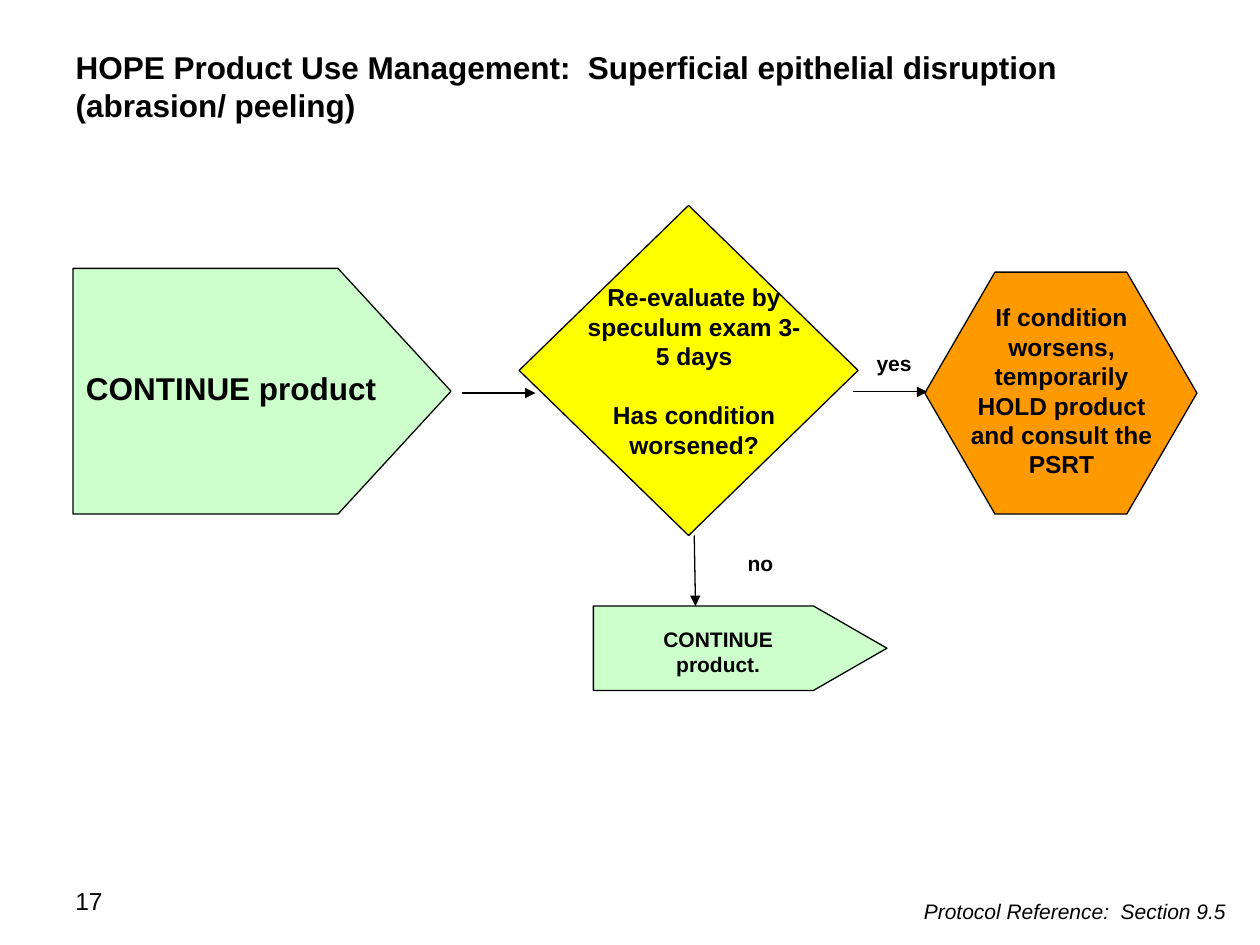
from dataclasses import dataclass

from lxml import etree
from pptx import Presentation
from pptx.dml.color import RGBColor
from pptx.enum.shapes import MSO_CONNECTOR, MSO_SHAPE
from pptx.enum.text import MSO_ANCHOR, MSO_AUTO_SIZE, PP_ALIGN
from pptx.oxml.ns import qn
from pptx.util import Inches, Pt

PENTAGON, HEXAGON, DIAMOND = MSO_SHAPE.PENTAGON, MSO_SHAPE.HEXAGON, MSO_SHAPE.DIAMOND
STRAIGHT = MSO_CONNECTOR.STRAIGHT
LEFT, CENTER, RIGHT = PP_ALIGN.LEFT, PP_ALIGN.CENTER, PP_ALIGN.RIGHT
TOP = MSO_ANCHOR.TOP
NO_FIT = MSO_AUTO_SIZE.NONE

COLORS = {"ink": "000000", "continue": "CCFFCC", "decide": "FFFF00", "hold": "FF9900"}
FONT = "Arial"
LINE_WIDTH = Pt(0.75)


@dataclass
class Step:
    kind: MSO_SHAPE
    at: tuple[float, float, float, float]
    color: str
    adjustment: float | None = None


@dataclass
class Label:
    at: tuple[float, float, float, float]
    lines: tuple[str, ...]
    size: int
    align: PP_ALIGN = CENTER
    bold: bool = True
    italic: bool = False
    gap: int = 0
    inset: float = 0.1


@dataclass
class Arrow:
    start: tuple[float, float]
    end: tuple[float, float]


STEPS = [
    Step(PENTAGON, (0.58, 2.13, 3, 1.95), "continue", 0.46),
    Step(HEXAGON, (7.34, 2.16, 2.16, 1.92), "hold", 0.29),
    Step(DIAMOND, (4.12, 1.63, 2.69, 2.62), "decide"),
    Step(PENTAGON, (4.71, 4.81, 2.33, 0.67), "continue", 0.87),
]
ARROWS = [
    Arrow((3.67, 3.12), (4.25, 3.12)),
    Arrow((6.77, 3.11), (7.36, 3.11)),
    Arrow((5.51, 4.25), (5.52, 4.81)),
]
TITLE = Label(
    (0.5, 0.33, 9, 0.71),
    ("HOPE Product Use Management:  Superficial epithelial disruption (abrasion/ peeling)",),
    18,
    LEFT,
)
LABELS = [
    Label((0.5, 6.98, 2.33, 0.52), ("17",), 14, LEFT, bold=False),
    Label((0.5, 2.88, 2.67, 0.71), ("CONTINUE product",), 18),
    Label((6.08, 7.08, 3.75, 0.3), ("Protocol Reference:  Section 9.5",), 12, RIGHT,
          bold=False, italic=True),
    Label((7.55, 2.35, 1.75, 1.51),
          ("If condition worsens, temporarily HOLD product and consult the PSRT",), 14),
    Label((4.53, 2.19, 1.96, 1.7),
          ("Re-evaluate by speculum exam 3-5 days", "Has condition worsened?"), 14, gap=17),
    Label((5.71, 4.32, 0.75, 0.3), ("no",), 12, inset=0),
    Label((6.77, 2.73, 0.75, 0.3), ("yes",), 12, inset=0),
    Label((4.84, 4.92, 1.72, 0.51), ("CONTINUE", "product."), 12),
]


def rgb(name: str) -> RGBColor:
    return RGBColor.from_string(COLORS[name])


def write(box, label: Label) -> None:
    box.left, box.top, box.width, box.height = map(Inches, label.at)
    frame = box.text_frame
    frame.word_wrap = True
    frame.auto_size = NO_FIT
    frame.vertical_anchor = TOP
    frame.margin_left = Inches(label.inset)
    frame.text = "\n".join(label.lines)
    for index, para in enumerate(frame.paragraphs):
        para.alignment = label.align
        para.space_before = Pt(label.gap if index else 0)
        para.font.name = FONT
        para.font.size = Pt(label.size)
        para.font.bold = label.bold
        para.font.italic = label.italic
        para.font.color.rgb = rgb("ink")


def draw_step(page, step: Step) -> None:
    shape = page.shapes.add_shape(step.kind, *map(Inches, step.at))
    shape.shadow.inherit = False
    if step.adjustment is not None:
        shape.adjustments[0] = step.adjustment
    shape.fill.solid()
    shape.fill.fore_color.rgb = rgb(step.color)
    shape.line.color.rgb = rgb("ink")
    shape.line.width = LINE_WIDTH


def draw_arrow(page, arrow: Arrow) -> None:
    connector = page.shapes.add_connector(STRAIGHT, *map(Inches, arrow.start + arrow.end))
    connector.line.color.rgb = rgb("ink")
    connector.line.width = LINE_WIDTH
    properties = connector._element.spPr
    etree.SubElement(properties.find(qn("a:ln")), qn("a:tailEnd"), type="triangle")
    etree.SubElement(properties, qn("a:effectLst"))


def main() -> None:
    deck = Presentation()
    deck.slide_width, deck.slide_height = Inches(10), Inches(7.5)
    page = deck.slides.add_slide(deck.slide_layouts[5])
    write(page.shapes.title, TITLE)
    for step in STEPS:
        draw_step(page, step)
    for arrow in ARROWS:
        draw_arrow(page, arrow)
    for label in LABELS:
        write(page.shapes.add_textbox(*map(Inches, label.at)), label)
    deck.save("out.pptx")


if __name__ == "__main__":
    main()
